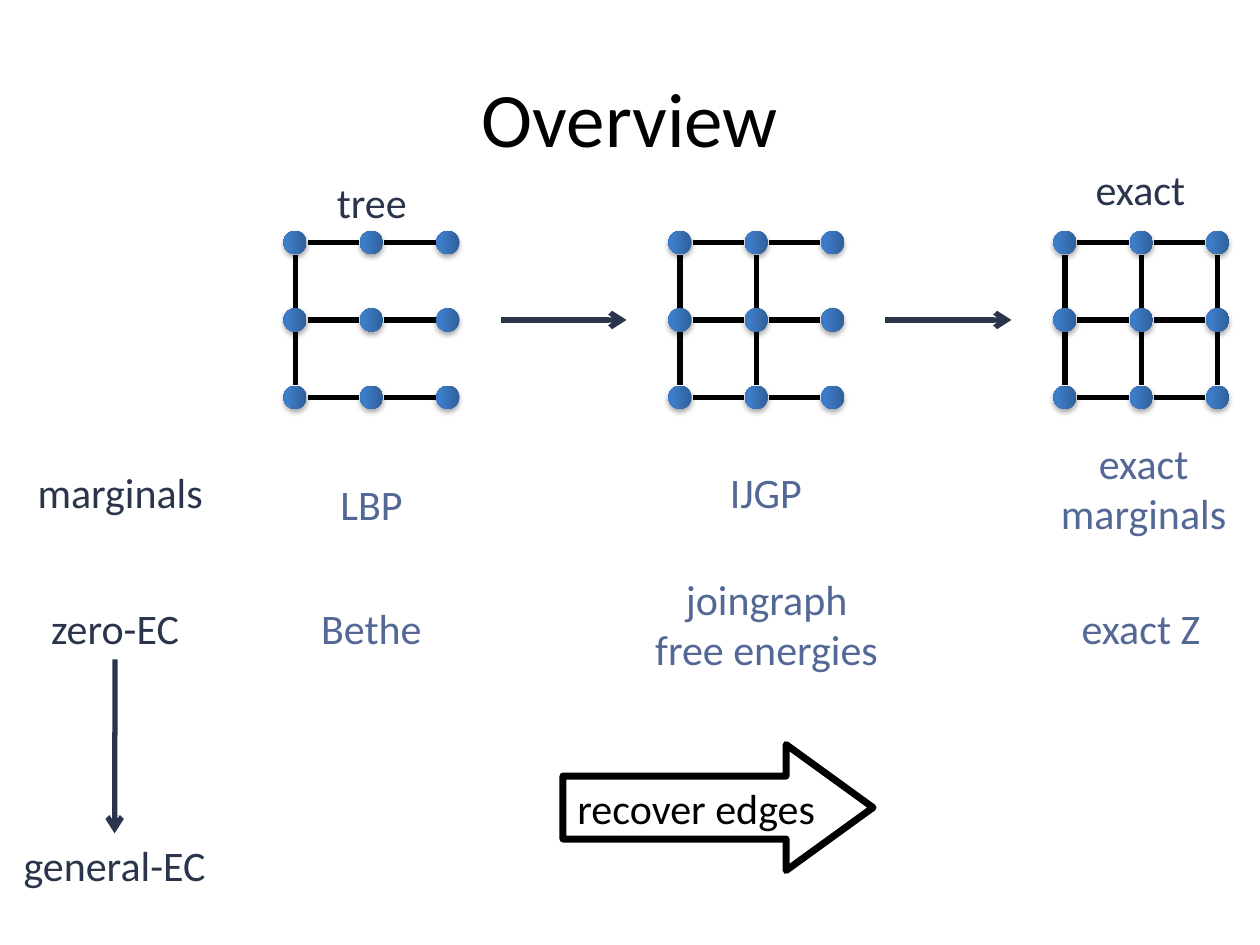
from lxml import etree
from pptx import Presentation
from pptx.dml.color import RGBColor
from pptx.enum.shapes import MSO_CONNECTOR, MSO_SHAPE
from pptx.enum.text import MSO_ANCHOR, MSO_AUTO_SIZE, PP_ALIGN
from pptx.oxml.ns import qn
from pptx.util import Cm, Pt

BLACK = RGBColor(0x00, 0x00, 0x00)
NAVY = RGBColor(0x2A, 0x35, 0x4C)
SLATE = RGBColor(0x53, 0x68, 0x95)
DOT_STOPS = {
    0: RGBColor(0x2F, 0x5F, 0x99),
    80000: RGBColor(0x3D, 0x7C, 0xC7),
    100000: RGBColor(0x3A, 0x7C, 0xCB),
}


def write_text(shape, text, size, color):
    frame = shape.text_frame
    paragraph = frame.paragraphs[0]
    paragraph.text = text
    paragraph.alignment = PP_ALIGN.CENTER
    for run in paragraph.runs:
        run.font.name = "Calibri"
        run.font.size = Pt(size)
        run.font.color.rgb = color
    return frame


def draw_line(shapes, x1, y1, x2, y2, color, arrow=False):
    """Draw a 3 pt line without shadow; coordinates are in centimetres."""
    line = shapes.add_connector(MSO_CONNECTOR.STRAIGHT, Cm(x1), Cm(y1), Cm(x2), Cm(y2))
    line.line.color.rgb = color
    line.line.width = Pt(3)
    if arrow:
        etree.SubElement(line.line._get_or_add_ln(), qn("a:tailEnd"), type="arrow")
    etree.SubElement(line._element.spPr, qn("a:effectLst"))
    return line


prs = Presentation()
prs.slide_width, prs.slide_height = Cm(25.4), Cm(19.05)
slide = prs.slides.add_slide(prs.slide_layouts[6])

title = slide.shapes.add_textbox(Cm(1.27), Cm(0.76), Cm(22.86), Cm(3.18))
title_frame = write_text(title, "Overview", 44, BLACK)
title_frame.word_wrap = True
title_frame.vertical_anchor = MSO_ANCHOR.MIDDLE

# Three 3 x 3 graphs, each with one more column of vertical edges recovered
FIRST_X, FIRST_Y, GRAPH_STEP = 5.95, 4.89, 7.76
PITCH_X, PITCH_Y = 1.54, 1.56
DOT, GAP = 0.47, 0.25

for graph in range(3):
    group = slide.shapes.add_group_shape().shapes
    columns = [FIRST_X + graph * GRAPH_STEP + i * PITCH_X for i in range(3)]
    rows = [FIRST_Y + i * PITCH_Y for i in range(3)]

    for x in columns:
        for y in rows:
            dot = group.add_shape(
                MSO_SHAPE.OVAL, Cm(x - DOT / 2), Cm(y - DOT / 2), Cm(DOT), Cm(DOT)
            )
            dot.rotation = 270
            dot.line.fill.background()
            dot.fill.gradient()
            dot.fill.gradient_angle = 90
            properties = dot._element.spPr
            properties.xfrm.set("flipH", "1")
            stops = properties.find(qn("a:gradFill")).find(qn("a:gsLst"))
            for old_stop in list(stops):
                stops.remove(old_stop)
            for position, color in DOT_STOPS.items():
                stop = etree.SubElement(stops, qn("a:gs"), pos=str(position))
                etree.SubElement(stop, qn("a:srgbClr"), val=str(color))
            effects = etree.SubElement(properties, qn("a:effectLst"))
            shadow = etree.SubElement(
                effects, qn("a:outerShdw"), blurRad=str(Pt(3.1)), dist=str(Pt(1.8)),
                dir="5400000", rotWithShape="0",
            )
            shade = etree.SubElement(shadow, qn("a:srgbClr"), val=str(BLACK))
            etree.SubElement(shade, qn("a:alpha"), val="35000")

    for y in rows:
        for x in columns[:2]:
            draw_line(group, x + GAP, y, x + PITCH_X - GAP, y, BLACK)
    for x in columns[:graph + 1]:
        for y in rows[:2]:
            draw_line(group, x, y + GAP, x, y + PITCH_Y - GAP, BLACK)

for start in (10.09, 17.85):
    draw_line(slide.shapes, start, 6.45, start + 2.54, 6.45, NAVY, arrow=True)

# Labels: text, left, top, width, height, color
labels = {}
for text, left, top, width, height, color in (
    ("tree", 6.53, 3.43, 1.93, 1.27, NAVY),
    ("exact", 21.82, 3.18, 2.34, 1.27, NAVY),
    ("marginals", 0.48, 9.27, 3.89, 1.27, NAVY),
    ("zero-EC", 0.76, 12.02, 3.12, 1.27, NAVY),
    ("general-EC", 0.2, 16.8, 4.22, 1.27, NAVY),
    ("LBP", 6.6, 9.53, 1.78, 1.27, SLATE),
    ("Bethe", 6.2, 12.02, 2.57, 1.27, SLATE),
    ("IJGP", 14.45, 9.27, 1.98, 1.27, SLATE),
    ("exact\nmarginals", 21.11, 8.69, 3.89, 2.31, SLATE),
    ("exact Z", 21.54, 12.02, 2.92, 1.27, SLATE),
    ("joingraph\nfree energies", 12.93, 11.43, 5.05, 2.31, SLATE),
):
    label = slide.shapes.add_textbox(Cm(left), Cm(top), Cm(width), Cm(height))
    frame = write_text(label, text, 24, color)
    frame.word_wrap = False
    frame.auto_size = MSO_AUTO_SIZE.SHAPE_TO_FIT_TEXT
    labels[text] = label

generalize = draw_line(slide.shapes, 2.32, 13.29, 2.31, 16.8, NAVY, arrow=True)
generalize.begin_connect(labels["zero-EC"], 2)
generalize.end_connect(labels["general-EC"], 0)

recover = slide.shapes.add_shape(
    MSO_SHAPE.RIGHT_ARROW, Cm(11.35), Cm(15.01), Cm(6.25), Cm(2.54)
)
recover.adjustments[0], recover.adjustments[1] = 0.5, 0.69
recover.shadow.inherit = False
recover.fill.background()
recover.line.color.rgb = BLACK
recover.line.width = Pt(4)
recover_frame = write_text(recover, "recover edges", 24, BLACK)
recover_frame.word_wrap = False
recover_frame.auto_size = MSO_AUTO_SIZE.SHAPE_TO_FIT_TEXT
recover_frame.vertical_anchor = MSO_ANCHOR.MIDDLE

prs.save("out.pptx")
